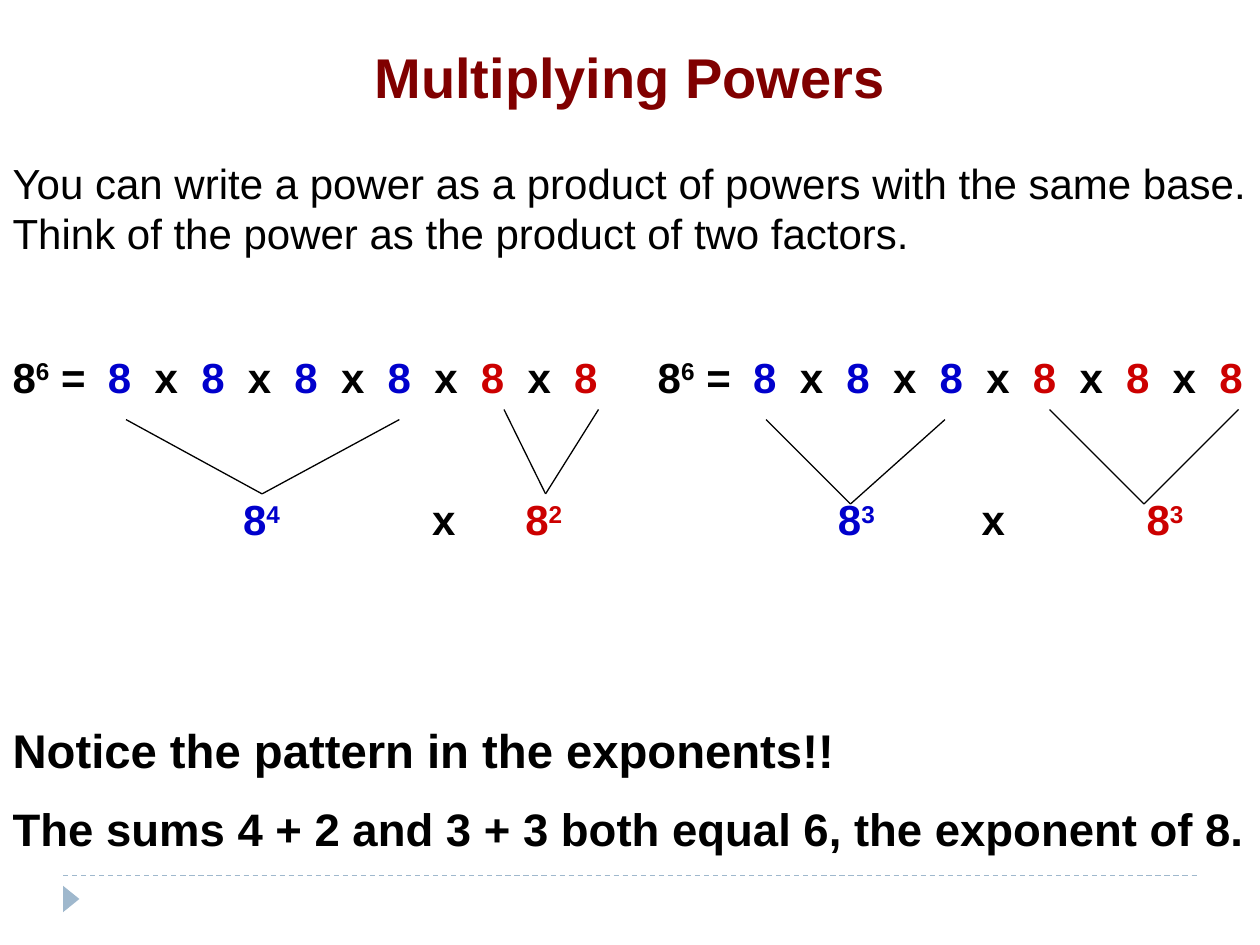
from lxml import etree
from pptx import Presentation, util as u
from pptx.dml.color import RGBColor
from pptx.enum import dml, shapes, text
from pptx.oxml.ns import qn

COLORS = {"title": "800000", "text": "000000", "first": "0000CC",
          "second": "CC0000", "accent": "9FB8CD"}
FONT = "Arial"
BASE = 8
FACTOR_START, FACTOR_PITCH = 0.85, 0.37
ROW_H = 0.4


def rgb(name):
    return RGBColor.from_string(COLORS[name])


def add_box(s, x, y, w, h):
    tf = s.shapes.add_textbox(u.Inches(x), u.Inches(y), u.Inches(w), u.Inches(h)).text_frame
    tf.margin_left = tf.margin_right = tf.margin_top = tf.margin_bottom = 0
    tf.word_wrap = True
    return tf


def add_run(p, words, size=24, color="text", bold=True, raised=False):
    r = p.add_run()
    r.text = words
    r.font.name, r.font.size, r.font.bold = FONT, u.Pt(size), bold
    r.font.color.rgb = rgb(color)
    if raised:
        r._r.get_or_add_rPr().set("baseline", "30000")


def add_power(p, exponent, color="text", lead=""):
    add_run(p, f"{lead}{BASE}", color=color)
    add_run(p, str(exponent), color=color, raised=True)


def set_tabs(p, stops, align):
    tabs = etree.SubElement(p._p.get_or_add_pPr(), qn("a:tabLst"))
    for stop in stops:
        etree.SubElement(tabs, qn("a:tab"), pos=str(u.Inches(stop)), algn=align)


def add_line(s, start, end, color="text"):
    ln = s.shapes.add_connector(shapes.MSO_CONNECTOR.STRAIGHT,
                                *(u.Inches(v) for v in (*start, *end)))
    ln.line.color.rgb = rgb(color)
    ln.line.width = u.Pt(0.75)
    etree.SubElement(ln._element.spPr, qn("a:effectLst"))
    return ln


def add_title(s, x, y, w, h):
    p = add_box(s, x, y, w, h).paragraphs[0]
    p.alignment = text.PP_ALIGN.CENTER
    add_run(p, "Multiplying Powers", 32, "title")


def add_intro(s, x, y, w, h):
    p = add_box(s, x, y, w, h).paragraphs[0]
    add_run(p, "You can write a power as a product of powers with the same base. "
               "Think of the power as the product of two factors.", bold=False)


def add_split(s, x, y, w, exponents, stops, brackets):
    """One expansion of the power, its brackets and the two factors below."""
    total = sum(exponents)

    # Expanded product, each factor and sign centred on a tab stop
    p = add_box(s, x, y, w, ROW_H).paragraphs[0]
    set_tabs(p, [FACTOR_START + FACTOR_PITCH * i for i in range(2 * total - 1)], "ctr")
    add_power(p, total)
    add_run(p, " =")
    for i in range(total):
        if i:
            add_run(p, "\tx")
        add_run(p, f"\t{BASE}", color="first" if i < exponents[0] else "second")

    # Product of two powers
    p = add_box(s, x, y + 1.13, w, ROW_H).paragraphs[0]
    set_tabs(p, stops, "l")
    add_power(p, exponents[0], "first", "\t")
    add_run(p, "\tx")
    add_power(p, exponents[1], "second", "\t")

    # Brackets: left arm, tip, right arm, arm height, tip height
    for left, tip, right, top, bottom in brackets:
        point = (x + tip, y + bottom)
        add_line(s, (x + left, y + top), point)
        add_line(s, point, (x + right, y + top))


def add_conclusion(s, x, y, w, h):
    tf = add_box(s, x, y, w, h)
    add_run(tf.paragraphs[0], "Notice the pattern in the exponents!!", 27)
    p = tf.add_paragraph()
    p.space_before = u.Pt(13.5)
    add_run(p, "The sums 4 + 2 and 3 + 3 both equal 6, the exponent of 8.", 26)


def add_footer(s, x, y, w):
    rule = add_line(s, (x, y), (x + w, y), "accent")
    rule.line.dash_style = dml.MSO_LINE.DASH
    sp = s.shapes.add_shape(shapes.MSO_SHAPE.ISOSCELES_TRIANGLE, u.Inches(x - 0.04),
                            u.Inches(y + 0.12), u.Inches(0.21), u.Inches(0.13))
    sp.rotation = 90
    sp.shadow.inherit = False
    sp.fill.solid()
    sp.fill.fore_color.rgb = rgb("accent")
    sp.line.fill.background()


def main():
    prs = Presentation()
    prs.slide_width, prs.slide_height = u.Inches(10), u.Inches(7.5)
    s = prs.slides.add_slide(prs.slide_layouts[6])
    add_footer(s, 0.5, 6.95, 9)
    add_title(s, 0.75, 0.34, 8.5, 0.55)
    add_intro(s, 0.1, 1.25, 9.88, 0.8)
    add_split(s, 0.1, 2.79, 4.9, (4, 2), (1.83, 3.33, 4.07),
              [(0.9, 1.98, 3.07, 0.54, 1.13), (3.9, 4.23, 4.65, 0.46, 1.13)])
    add_split(s, 5.22, 2.79, 4.78, (3, 3), (1.43, 2.57, 3.88),
              [(0.86, 1.53, 2.28, 0.54, 1.21), (3.11, 3.86, 4.61, 0.46, 1.21)])
    add_conclusion(s, 0.1, 5.72, 9.88, 1.05)
    prs.save("out.pptx")


if __name__ == "__main__":
    main()
